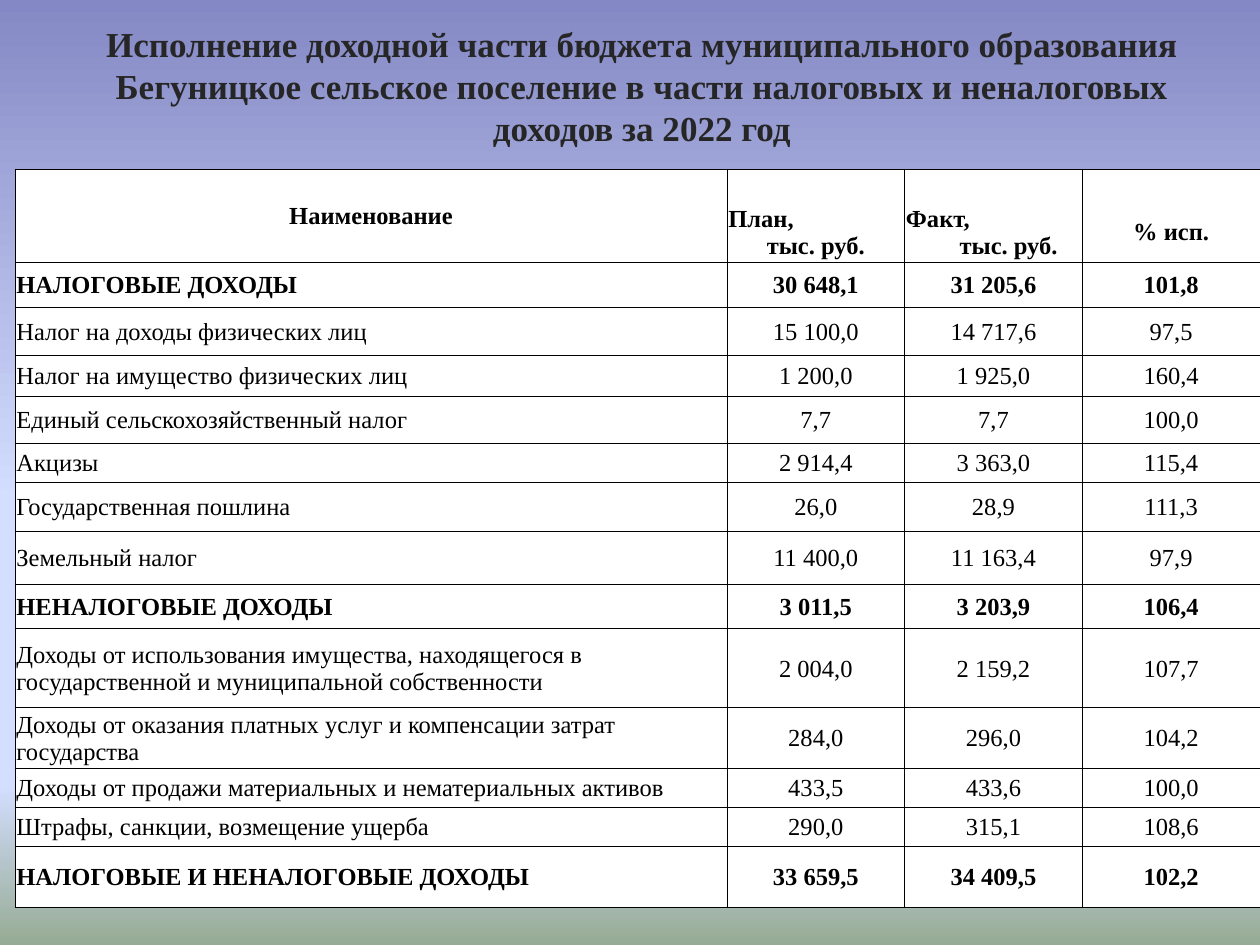
from lxml import etree
from pptx import Presentation
from pptx import util as u
from pptx.dml.color import RGBColor
from pptx.enum import text
from pptx.oxml.ns import qn

BLACK = RGBColor(0x00, 0x00, 0x00)
WHITE = RGBColor(0xFF, 0xFF, 0xFF)
TITLE_GREY = RGBColor(0x26, 0x26, 0x26)
SKY = [
    (0, RGBColor(0x84, 0x88, 0xC4)),
    (53, RGBColor(0xD4, 0xDE, 0xFF)),
    (83, RGBColor(0xD4, 0xDE, 0xFF)),
    (100, RGBColor(0x96, 0xAB, 0x94)),
]
LEFT, CENTER = text.PP_ALIGN.LEFT, text.PP_ALIGN.CENTER

TITLE = ("Исполнение доходной части бюджета муниципального образования "
         "Бегуницкое сельское поселение в части налоговых и неналоговых "
         "доходов за 2022 год")
UNIT = "тыс. руб."
# Row height in inches, name, plan, actual, percentage; totals are in capitals
INCOME = [
    (0.36, "НАЛОГОВЫЕ ДОХОДЫ", "30 648,1", "31 205,6", "101,8"),
    (0.38, "Налог на доходы физических лиц", "15 100,0", "14 717,6", "97,5"),
    (0.33, "Налог на имущество физических лиц", "1 200,0", "1 925,0", "160,4"),
    (0.37, "Единый сельскохозяйственный налог", "7,7", "7,7", "100,0"),
    (0.31, "Акцизы", "2 914,4", "3 363,0", "115,4"),
    (0.39, "Государственная пошлина", "26,0", "28,9", "111,3"),
    (0.42, "Земельный налог", "11 400,0", "11 163,4", "97,9"),
    (0.35, "НЕНАЛОГОВЫЕ ДОХОДЫ", "3 011,5", "3 203,9", "106,4"),
    (0.63, "Доходы от использования имущества, находящегося в "
           "государственной и муниципальной собственности",
     "2 004,0", "2 159,2", "107,7"),
    (0.46, "Доходы от оказания платных услуг и компенсации затрат государства",
     "284,0", "296,0", "104,2"),
    (0.31, "Доходы от продажи материальных и нематериальных активов",
     "433,5", "433,6", "100,0"),
    (0.31, "Штрафы, санкции, возмещение ущерба", "290,0", "315,1", "108,6"),
    (0.49, "НАЛОГОВЫЕ И НЕНАЛОГОВЫЕ ДОХОДЫ", "33 659,5", "34 409,5", "102,2"),
]
HEADER_ROWS = [0.26, 0.44]
COLUMNS = [5.65, 1.41, 1.41, 1.41]


class BudgetSlide:
    font_name = "Times New Roman"
    title_size = u.Pt(20)
    table_size = u.Pt(14)
    border = u.Pt(0.5)

    def __init__(self, deck):
        self.width, self.height = deck.slide_width, deck.slide_height
        self.slide = deck.slides.add_slide(deck.slide_layouts[6])

    def place(self, left, top, width, height):
        """Turn shares of the slide's size into lengths."""
        return (round(left * self.width), round(top * self.height),
                round(width * self.width), round(height * self.height))

    def style(self, paragraph, size, color, bold, align):
        paragraph.alignment = align
        font = paragraph.font
        font.name, font.size, font.bold = self.font_name, size, bold
        font.color.rgb = color

    def background(self, stops):
        fill = self.slide.background.fill
        fill.gradient()
        fill.gradient_angle = 270
        stop_list = self.slide.element.find(".//" + qn("a:gsLst"))
        for old in list(stop_list):
            stop_list.remove(old)
        for percent, color in stops:
            stop = etree.SubElement(stop_list, qn("a:gs"), pos=str(percent * 1000))
            etree.SubElement(stop, qn("a:srgbClr"), val=str(color))

    def title(self, wording, box):
        frame = self.slide.shapes.add_textbox(*self.place(*box)).text_frame
        frame.word_wrap = True
        frame.vertical_anchor = text.MSO_ANCHOR.BOTTOM
        frame.text = wording
        self.style(frame.paragraphs[0], self.title_size, TITLE_GREY, True, CENTER)

    def table(self, box, columns, rows):
        shape = self.slide.shapes.add_table(len(rows), len(columns), *self.place(*box))
        table = shape.table
        table.first_row = table.horz_banding = False
        for column, width in zip(table.columns, columns):
            column.width = u.Inches(width)
        for row, height in zip(table.rows, rows):
            row.height = u.Inches(height)
        return table

    def cell(self, cell, lines=("",), aligns=(CENTER,), bold=False, open_side=None):
        """Fill a cell; open_side names the one edge without a border."""
        cell.margin_left = cell.margin_right = cell.margin_top = u.Inches(0.01)
        cell.margin_bottom = 0
        cell.vertical_anchor = text.MSO_ANCHOR.MIDDLE
        cell.text = "\n".join(lines)
        for paragraph, align in zip(cell.text_frame.paragraphs, aligns):
            self.style(paragraph, self.table_size, BLACK, bold, align)
        properties = cell._tc.get_or_add_tcPr()
        for side in "LRTB":
            line = etree.SubElement(properties, qn("a:ln" + side), w=str(self.border))
            if side == open_side:
                etree.SubElement(line, qn("a:noFill"))
            else:
                paint = etree.SubElement(line, qn("a:solidFill"))
                etree.SubElement(paint, qn("a:srgbClr"), val=str(BLACK))
        cell.fill.solid()
        cell.fill.fore_color.rgb = WHITE

    def header(self, table):
        self.cell(table.cell(0, 0), ["Наименование"], bold=True)
        self.cell(table.cell(1, 0))
        table.cell(0, 0).merge(table.cell(1, 0))
        captions = [["План,", UNIT], ["Факт,", UNIT], ["% исп."]]
        for column, lines in enumerate(captions, start=1):
            aligns = [LEFT, CENTER] if len(lines) == 2 else [CENTER]
            self.cell(table.cell(0, column), open_side="B")
            self.cell(table.cell(1, column), lines, aligns, True, open_side="T")
        actual_unit = table.cell(1, 2).text_frame.paragraphs[1]
        actual_unit._p.get_or_add_pPr().set("marL", str(u.Inches(0.24)))

    def income(self, table, first_row, entries):
        for row, (_, name, *values) in enumerate(entries, start=first_row):
            for column, wording in enumerate([name, *values]):
                align = CENTER if column else LEFT
                self.cell(table.cell(row, column), [wording], [align], name.isupper())


def main():
    deck = Presentation()
    deck.slide_width, deck.slide_height = u.Inches(10), u.Inches(7.5)
    page = BudgetSlide(deck)
    page.background(SKY)
    page.title(TITLE, (0.043, 0.02, 0.933, 0.144))
    heights = HEADER_ROWS + [entry[0] for entry in INCOME]
    table = page.table((0.012, 0.179, 0.988, 0.779), COLUMNS, heights)
    page.header(table)
    page.income(table, len(HEADER_ROWS), INCOME)
    deck.save("out.pptx")


if __name__ == "__main__":
    main()
